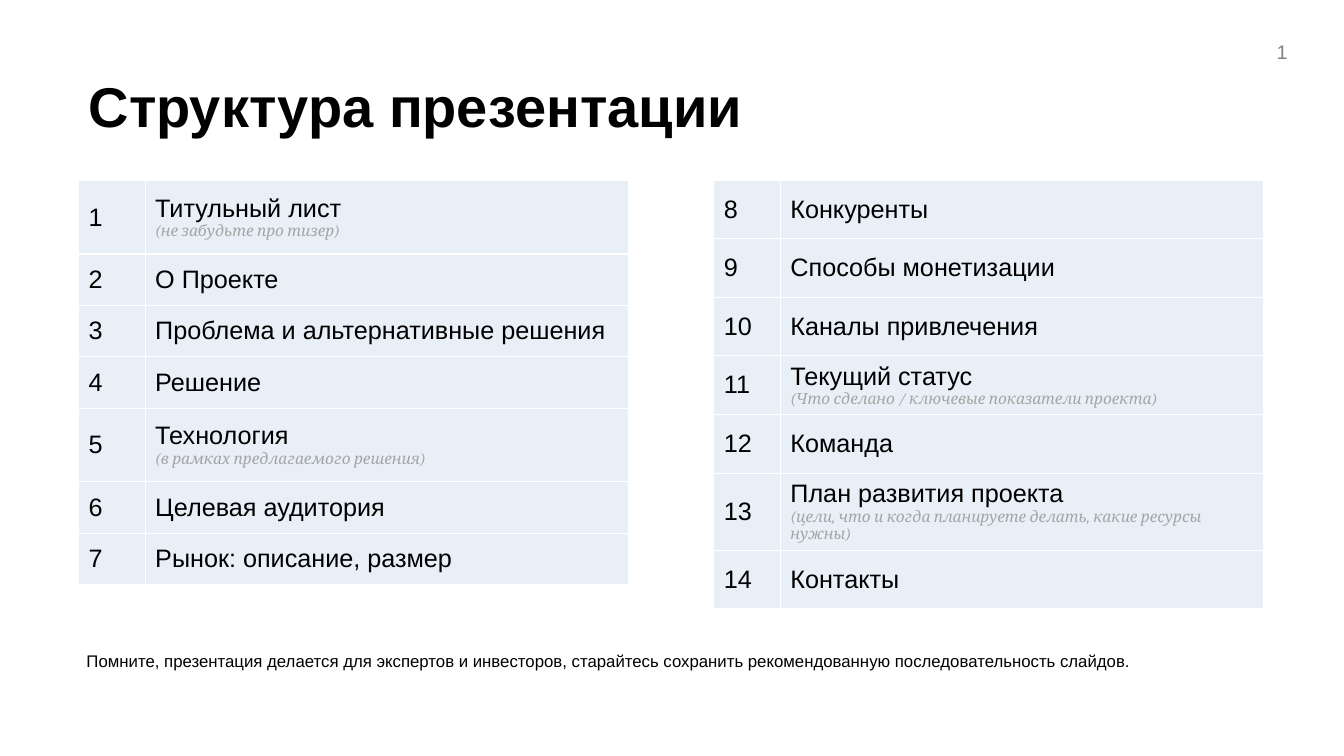
from pptx import Presentation
from pptx.dml.color import RGBColor
from pptx.enum.text import MSO_ANCHOR, PP_ALIGN
from pptx.util import Inches, Pt

LEFT, RIGHT = PP_ALIGN.LEFT, PP_ALIGN.RIGHT
TOP, MIDDLE = MSO_ANCHOR.TOP, MSO_ANCHOR.MIDDLE
BLACK, GREY, NOTE_GREY, PALE_BLUE = "000000", "7F7F7F", "A5A5A5", "E9EFF7"
TITLE_ONLY = 5
COLUMN_WIDTHS = (0.66, 4.79)

# Each section: name and optional hint
FIRST_HALF = [
    ("Титульный лист", "(не забудьте про тизер)"),
    ("О Проекте", ""),
    ("Проблема и альтернативные решения", ""),
    ("Решение", ""),
    ("Технология", "(в рамках предлагаемого решения)"),
    ("Целевая аудитория", ""),
    ("Рынок: описание, размер", ""),
]
SECOND_HALF = [
    ("Конкуренты", ""),
    ("Способы монетизации", ""),
    ("Каналы привлечения", ""),
    ("Текущий статус", "(Что сделано / ключевые показатели проекта)"),
    ("Команда", ""),
    ("План развития проекта",
     "(цели, что и когда планируете делать, какие ресурсы нужны)"),
    ("Контакты", ""),
]


def rgb(value):
    return RGBColor.from_string(value)


def write(p, text, size=18, font="Arial", color=BLACK, bold=False,
          italic=False, align=LEFT, spacing=None):
    p.alignment = align
    if spacing:
        p.line_spacing = spacing
    r = p.add_run()
    r.text = text
    r.font.size, r.font.name = Pt(size), font
    r.font.bold, r.font.italic = bold, italic
    r.font.color.rgb = rgb(color)


def add_title(s, x, y, w, h, text):
    sp = s.shapes.title
    sp.left, sp.top, sp.width, sp.height = map(Inches, (x, y, w, h))
    tf = sp.text_frame
    tf.vertical_anchor = MIDDLE
    write(tf.paragraphs[0], text, size=40, bold=True)


def add_text(s, x, y, w, h, text, inset=0, **fmt):
    tf = s.shapes.add_textbox(*map(Inches, (x, y, w, h))).text_frame
    tf.word_wrap = True
    tf.vertical_anchor = TOP
    tf.margin_left = tf.margin_right = Inches(inset)
    tf.margin_top = tf.margin_bottom = Inches(inset)
    write(tf.paragraphs[0], text, **fmt)


def add_sections(s, x, y, sections, start, row_height, hint_height):
    """Numbered list of sections; rows with a hint may be taller."""
    heights = [hint_height if hint else row_height for _, hint in sections]
    box = map(Inches, (x, y, sum(COLUMN_WIDTHS), sum(heights)))
    table = s.shapes.add_table(len(sections), 2, *box).table
    table.first_row = table.horz_banding = False
    for column, width in zip(table.columns, COLUMN_WIDTHS):
        column.width = Inches(width)
    for i, (name, hint) in enumerate(sections):
        table.rows[i].height = Inches(heights[i])
        for j, text in enumerate((str(start + i), name)):
            cell = table.cell(i, j)
            cell.fill.solid()
            cell.fill.fore_color.rgb = rgb(PALE_BLUE)
            cell.vertical_anchor = MIDDLE
            write(cell.text_frame.paragraphs[0], text)
        if hint:
            write(table.cell(i, 1).text_frame.add_paragraph(), hint, size=11,
                  font="Cambria", color=NOTE_GREY, italic=True)


def main():
    prs = Presentation()
    prs.slide_width, prs.slide_height = Inches(13.33), Inches(7.5)
    s = prs.slides.add_slide(prs.slide_layouts[TITLE_ONLY])

    # Title and page number
    add_title(s, 0.78, 0.64, 11.19, 0.81, "Структура презентации")
    add_text(s, 12.53, 0.4, 0.24, 0.24, "1", size=14, color=GREY, align=RIGHT)

    # Two halves of the contents
    add_sections(s, 0.78, 1.79, FIRST_HALF, 1, 0.51, 0.73)
    add_sections(s, 7.08, 1.79, SECOND_HALF, len(FIRST_HALF) + 1, 0.58, 0.58)

    # Reminder
    add_text(s, 0.76, 6.39, 10.93, 0.65,
             "Помните, презентация делается для экспертов и инвесторов, "
             "старайтесь сохранить рекомендованную последовательность слайдов.",
             inset=0.1, size=12, spacing=0.9)
    prs.save("out.pptx")


if __name__ == "__main__":
    main()
